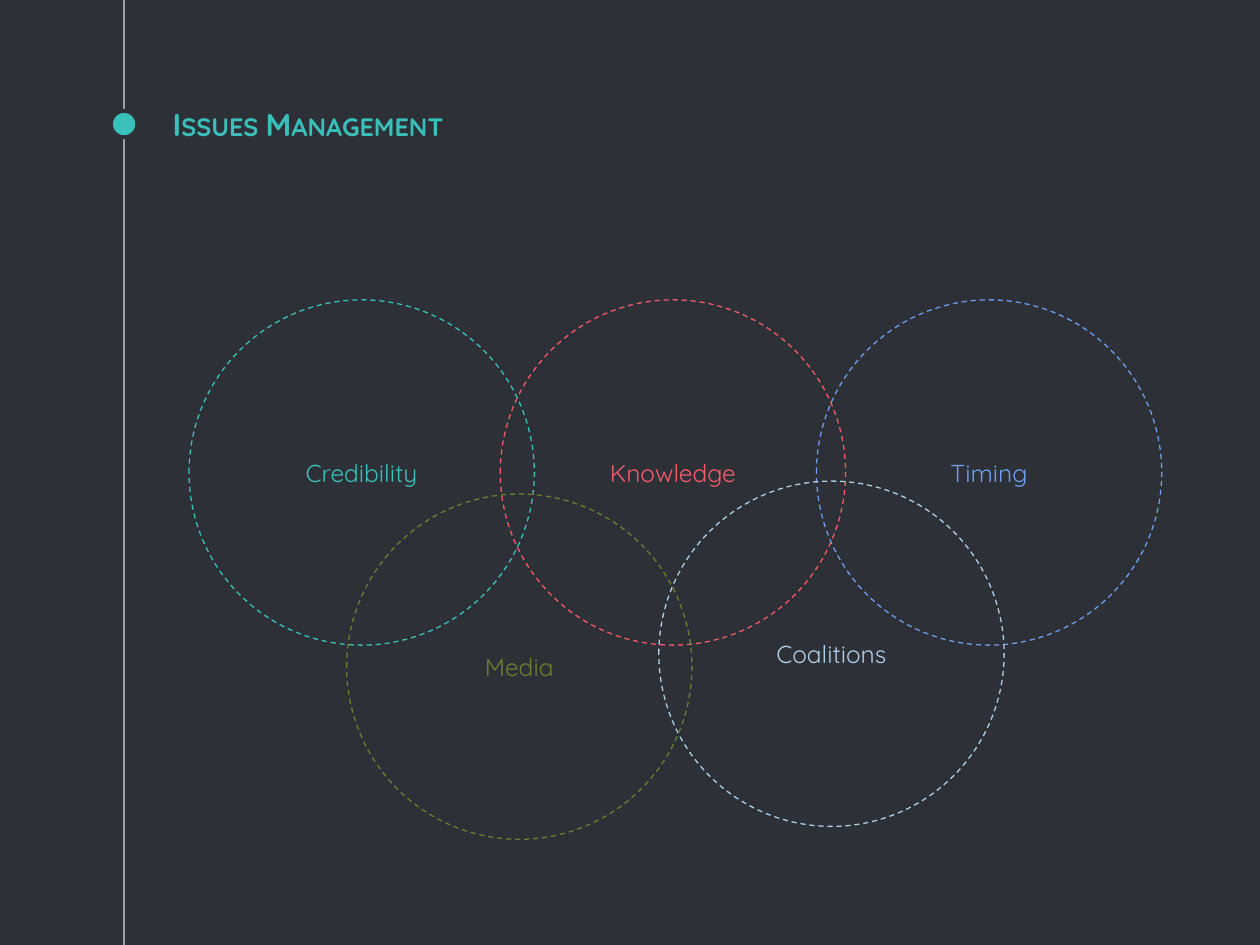
from pptx import Presentation
from pptx import util as u
from pptx.dml.color import RGBColor
from pptx.enum import dml, shapes, text
from pptx.oxml.ns import qn
from lxml import etree

WIDE, HIGH = 10, 7.5
FONT = "Quicksand"
HUES = {
    "back": "2E3037",
    "rail": "999FA9",
    "teal": "39C0BA",
    "red": "F35B69",
    "blue": "6D9EEB",
    "pale": "AECDE6",
    "olive": "688031",
}
RINGS = [
    ("Knowledge", "red", 0.32, 0),
    ("Credibility", "teal", 0, 0),
    ("Timing", "blue", 0.645, 0),
    ("Coalitions", "pale", 0.483, 0.336),
    ("Media", "olive", 0.162, 0.36),
]


def hue(name):
    return RGBColor.from_string(HUES[name])


def inch(*sides):
    return [u.Inches(side) for side in sides]


def style(frame, size, name, align, anchor):
    frame.word_wrap = True
    frame.auto_size = text.MSO_AUTO_SIZE.NONE
    frame.vertical_anchor = anchor
    frame.margin_left = frame.margin_right = u.Inches(0.1)
    frame.margin_top = frame.margin_bottom = u.Inches(0.1)
    para = frame.paragraphs[0]
    para.alignment = align
    run = para.runs[0]
    run.font.size = u.Pt(size)
    run.font.name = FONT
    run.font.color.rgb = hue(name)
    return run


def oval(slide, box):
    shape = slide.shapes.add_shape(shapes.MSO_SHAPE.OVAL, *inch(*box))
    shape.shadow.inherit = False
    return shape


def rail(slide, box):
    left, top, width, height = box
    mid = left + width / 2
    line = slide.shapes.add_connector(
        shapes.MSO_CONNECTOR.STRAIGHT, *inch(mid, 0, mid, HIGH))
    line.line.color.rgb = hue("rail")
    line.line.width = u.Pt(0.75)
    etree.SubElement(line._element.spPr, qn("a:effectLst"))
    dot = oval(slide, box)
    dot.fill.solid()
    dot.fill.fore_color.rgb = hue("teal")
    dot.line.color.rgb = hue("back")
    dot.line.width = u.Pt(2.25)


def head(slide, box):
    title = slide.shapes.title
    title.left, title.top, title.width, title.height = inch(*box)
    title.text_frame.text = "Issues Management"
    run = style(title.text_frame, 18, "teal",
                text.PP_ALIGN.LEFT, text.MSO_ANCHOR.BOTTOM)
    run.font.bold = True
    run._r.get_or_add_rPr().set("cap", "small")


def venn(slide, box):
    left, top, width, height = box
    size = width * 0.355
    for label, name, col, row in RINGS:
        ring = oval(slide, (left + col * width, top + row * height, size, size))
        ring.fill.background()
        ring.line.color.rgb = hue(name)
        ring.line.width = u.Pt(0.75)
        ring.line.dash_style = dml.MSO_LINE.DASH
        ring.text_frame.text = label
        style(ring.text_frame, 14, name,
              text.PP_ALIGN.CENTER, text.MSO_ANCHOR.MIDDLE)


def main():
    deck = Presentation()
    deck.slide_width, deck.slide_height = inch(WIDE, HIGH)
    slide = deck.slides.add_slide(deck.slide_layouts.get_by_name("Title Only"))
    slide.background.fill.solid()
    slide.background.fill.fore_color.rgb = hue("back")
    rail(slide, (0.88, 0.88, 0.21, 0.21))
    head(slide, (1.27, 0.73, WIDE * 0.75, 0.5))
    venn(slide, (1.5, 2.38, 7.72, 4.28))
    deck.save("out.pptx")


if __name__ == "__main__":
    main()
